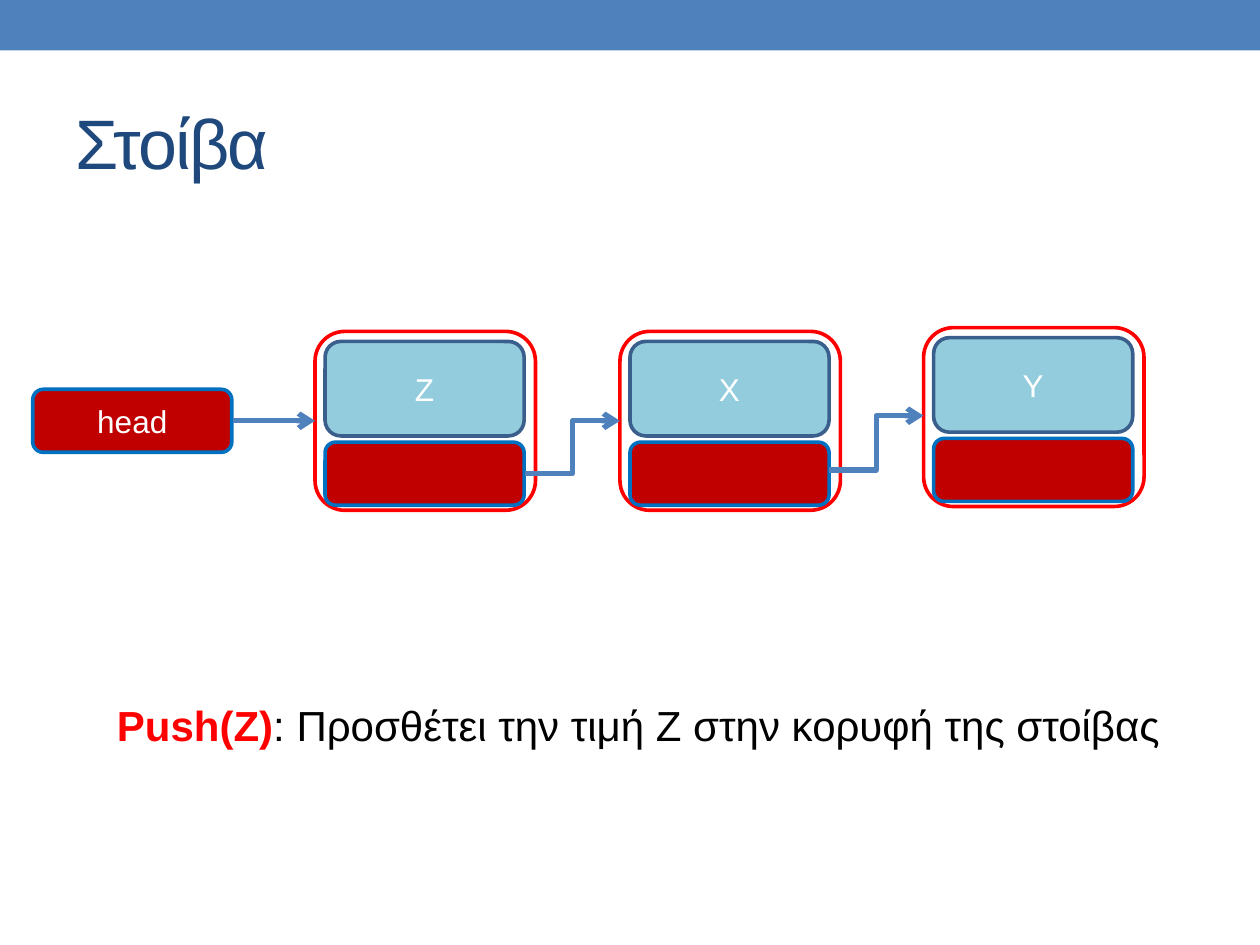
from dataclasses import dataclass
from typing import Optional

from lxml import etree
from pptx import Presentation
from pptx.dml.color import RGBColor
from pptx.enum import shapes, text
from pptx.oxml import ns
from pptx.util import Inches, Pt

BLUE = RGBColor(0x4F, 0x81, 0xBD)
NAVY = RGBColor(0x1F, 0x49, 0x7D)
RED = RGBColor(0xFF, 0x00, 0x00)
DARK_RED = RGBColor(0xC0, 0x00, 0x00)
POINTER_EDGE = RGBColor(0x00, 0x70, 0xC0)
AQUA = RGBColor(0x93, 0xCD, 0xDD)
VALUE_EDGE = RGBColor(0x3A, 0x5F, 0x8C)
WHITE = RGBColor(0xFF, 0xFF, 0xFF)
BLACK = RGBColor(0x00, 0x00, 0x00)

RECT = shapes.MSO_SHAPE.RECTANGLE
ROUNDED = shapes.MSO_SHAPE.ROUNDED_RECTANGLE
STRAIGHT = shapes.MSO_CONNECTOR.STRAIGHT
ELBOW = shapes.MSO_CONNECTOR.ELBOW
CELL_WIDTH = 1.58
POINTER_HEIGHT = 0.5


@dataclass
class Node:
    value: str
    left: float
    top: float


@dataclass
class Style:
    fill: Optional[RGBColor]
    edge: Optional[RGBColor]


@dataclass
class Link:
    kind: int
    start: tuple[float, float]
    end: tuple[float, float]


FRAME = Style(None, RED)
POINTER = Style(DARK_RED, POINTER_EDGE)
VALUE = Style(AQUA, VALUE_EDGE)
BAND = Style(BLUE, None)

NODES = [Node("Z", 2.5, 2.63), Node("X", 4.92, 2.63), Node("Y", 7.33, 2.6)]
LINKS = [
    Link(ELBOW, (4.17, 3.76), (4.92, 3.34)),
    Link(ELBOW, (6.58, 3.73), (7.33, 3.3)),
    Link(STRAIGHT, (1.85, 3.34), (2.5, 3.34)),
]


def format_run(run, size: float, color: RGBColor, bold: bool = False) -> None:
    run.font.name = "Arial"
    run.font.size = Pt(size)
    run.font.bold = bold
    run.font.color.rgb = color


def draw_box(parent, kind, left: float, top: float, width: float, height: float,
             style: Style, label: str = "") -> None:
    box = parent.add_shape(kind, Inches(left), Inches(top), Inches(width), Inches(height))
    box.shadow.inherit = False
    if style.fill is None:
        box.fill.background()
    else:
        box.fill.solid()
        box.fill.fore_color.rgb = style.fill
    if style.edge is None:
        box.line.fill.background()
    else:
        box.line.color.rgb = style.edge
        box.line.width = Pt(2.08)
    if label:
        frame = box.text_frame
        frame.text = label
        frame.vertical_anchor = text.MSO_ANCHOR.MIDDLE
        frame.paragraphs[0].alignment = text.PP_ALIGN.CENTER
        format_run(frame.paragraphs[0].runs[0], 18, WHITE)


def draw_node(parent, node: Node) -> None:
    parts = parent.add_group_shape().shapes
    inner = node.left + 0.08
    draw_box(parts, ROUNDED, node.left, node.top, 1.75, 1.42, FRAME)
    draw_box(parts, ROUNDED, inner, node.top + 0.88, CELL_WIDTH, POINTER_HEIGHT, POINTER)
    draw_box(parts, ROUNDED, inner, node.top + 0.08, CELL_WIDTH, 0.75, VALUE, node.value)


def draw_link(parent, link: Link) -> None:
    points = [Inches(value) for value in (*link.start, *link.end)]
    arrow = parent.add_connector(link.kind, *points)
    arrow.line.color.rgb = BLUE
    arrow.line.width = Pt(3)
    etree.SubElement(arrow.line._get_or_add_ln(), ns.qn("a:tailEnd"), type="arrow")
    etree.SubElement(arrow._element.spPr, ns.qn("a:effectLst"))


def draw_title(parent) -> None:
    title = parent.add_textbox(Inches(0.5), Inches(0.58), Inches(9), Inches(1.08))
    frame = title.text_frame
    frame.word_wrap = True
    frame.vertical_anchor = text.MSO_ANCHOR.MIDDLE
    frame.text = "Στοίβα"
    run = frame.paragraphs[0].runs[0]
    format_run(run, 40, NAVY)
    run.font._element.set("spc", "-100")


def draw_caption(parent) -> None:
    caption = parent.add_textbox(Inches(0.83), Inches(5.5), Inches(8.63), Inches(0.91))
    frame = caption.text_frame
    frame.word_wrap = False
    paragraph = frame.paragraphs[0]
    operation, meaning = paragraph.add_run(), paragraph.add_run()
    operation.text = "Push(Z)"
    meaning.text = ": Προσθέτει την τιμή Z στην κορυφή της στοίβας"
    format_run(operation, 24, RED, bold=True)
    format_run(meaning, 24, BLACK)


def main() -> None:
    deck = Presentation()
    deck.slide_width, deck.slide_height = Inches(10), Inches(7.5)
    canvas = deck.slides.add_slide(deck.slide_layouts[6]).shapes
    draw_box(canvas, RECT, 0, 0, 10, 0.4, BAND)
    draw_title(canvas)
    for node in NODES:
        draw_node(canvas, node)
    draw_box(canvas, ROUNDED, 0.26, 3.09, CELL_WIDTH, POINTER_HEIGHT, POINTER, "head")
    for link in LINKS:
        draw_link(canvas, link)
    draw_caption(canvas)
    deck.save("out.pptx")


if __name__ == "__main__":
    main()
